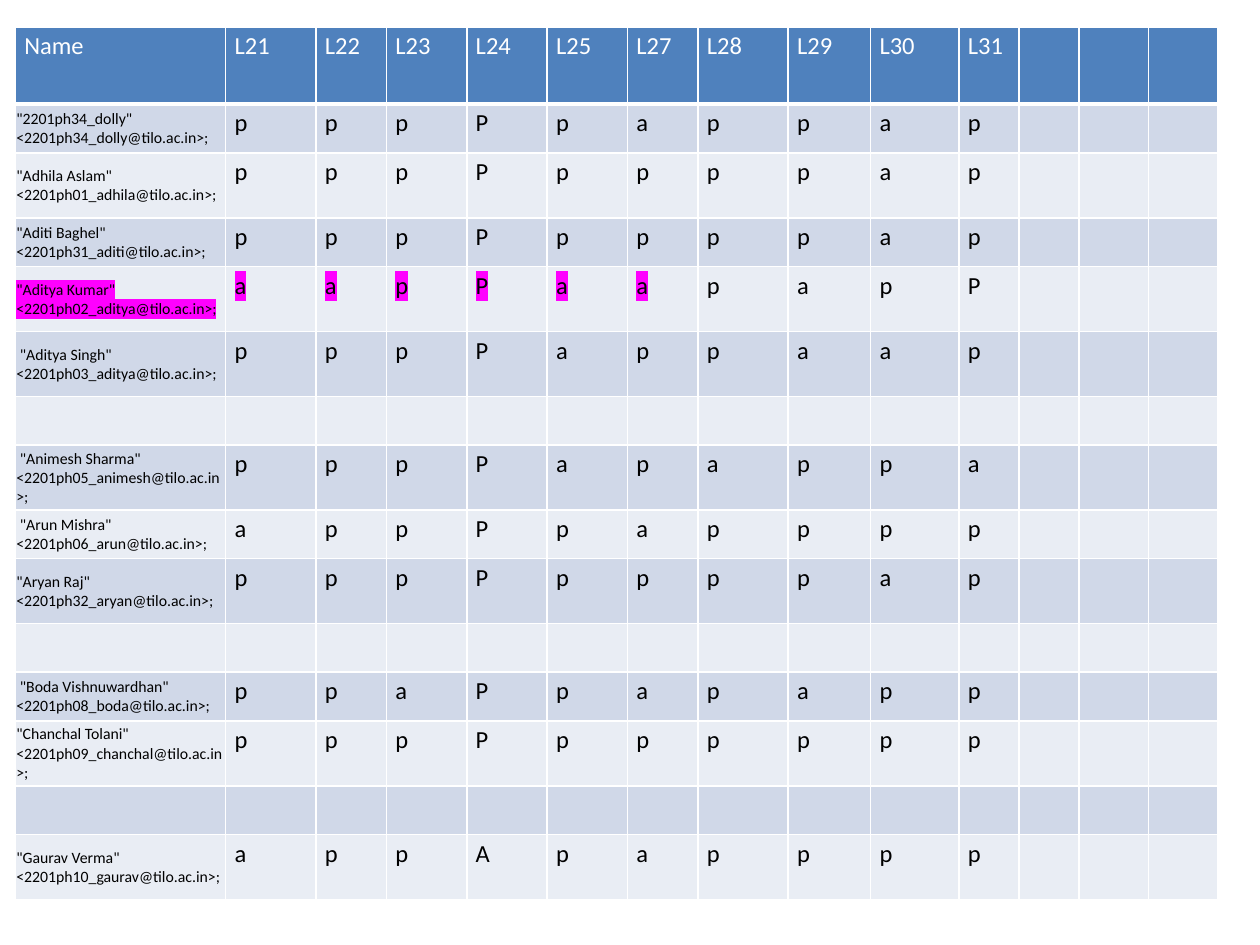
from lxml.etree import SubElement
from pptx import Presentation
from pptx.dml.color import RGBColor
from pptx.enum.text import MSO_ANCHOR
from pptx.oxml import parse_xml
from pptx.oxml.ns import nsdecls, qn
from pptx.util import Cm, Pt

COLORS = {
    "header": "4F81BD",
    "odd": "D0D8E8",
    "even": "E9EDF4",
    "line": "FFFFFF",
    "header_text": "FFFFFF",
    "text": "000000",
    "highlight": "FF00FF",
}
FONT = "Calibri"
DOMAIN = "tilo.ac.in"

COLUMN_WIDTHS = [4.24, 1.82, 1.42, 1.62, 1.62, 1.62, 1.42,
                 1.82, 1.66, 1.78, 1.21, 1.21, 1.4, 1.4]
HEADER_HEIGHT, SHORT, TALL = 1.56, 0.98, 1.31
LECTURES = ["L21", "L22", "L23", "L24", "L25", "L27", "L28", "L29", "L30", "L31"]

# Name, mailbox, one mark per lecture, row height; None is an empty row
STUDENTS = [
    ('"2201ph34_dolly"', "2201ph34_dolly", "pppPpappap", SHORT),
    ('"Adhila Aslam"', "2201ph01_adhila", "pppPppppap", TALL),
    ('"Aditi Baghel"', "2201ph31_aditi", "pppPppppap", SHORT),
    ('"Aditya Kumar"', "2201ph02_aditya", "aapPaapapP", TALL),
    (' "Aditya Singh"', "2201ph03_aditya", "pppPappaap", TALL),
    None,
    (' "Animesh Sharma"', "2201ph05_animesh", "pppPapappa", TALL),
    (' "Arun Mishra"', "2201ph06_arun", "appPpapppp", SHORT),
    ('"Aryan Raj"', "2201ph32_aryan", "pppPppppap", TALL),
    None,
    (' "Boda Vishnuwardhan"', "2201ph08_boda", "ppaPpapapp", SHORT),
    ('"Chanchal Tolani"', "2201ph09_chanchal", "pppPpppppp", TALL),
    None,
    ('"Gaurav Verma"', "2201ph10_gaurav", "appApapppp", TALL),
]
HIGHLIGHTED_MAILBOX = "2201ph02_aditya"
HIGHLIGHTED_COLUMNS = 7  # the name and the first six marks


def style_cell(cell, fill, bottom_width=1):
    """Draw the borders, the fill and the margins of a cell."""
    properties = cell._tc.get_or_add_tcPr()
    for side, width in (("L", 1), ("R", 1), ("T", 1), ("B", bottom_width)):
        line = SubElement(properties, qn(f"a:ln{side}"), w=str(Pt(width)))
        line_fill = SubElement(line, qn("a:solidFill"))
        SubElement(line_fill, qn("a:srgbClr"), val=COLORS["line"])
    cell.fill.solid()
    cell.fill.fore_color.rgb = RGBColor.from_string(COLORS[fill])
    cell.margin_left = cell.margin_right = Cm(0.18)
    cell.margin_top = cell.margin_bottom = Cm(0.09)


def write_cell(cell, text, size, color="text", highlighted=False):
    cell.text_frame.text = text
    run = cell.text_frame.paragraphs[0].runs[0]
    run.font.size = Pt(size)
    run.font.bold = False
    run.font.color.rgb = RGBColor.from_string(COLORS[color])
    if highlighted:
        run._r.rPr.append(parse_xml(
            f'<a:highlight {nsdecls("a")}>'
            f'<a:srgbClr val="{COLORS["highlight"]}"/></a:highlight>'))
    run.font.name = FONT


def fill_header(table):
    for cell in table.rows[0].cells:
        style_cell(cell, "header", bottom_width=3)
    for cell, title in zip(table.rows[0].cells, ["Name"] + LECTURES):
        write_cell(cell, title, 14, "header_text")


def fill_student(row, student):
    name, mailbox, marks, _ = student
    highlighted = mailbox == HIGHLIGHTED_MAILBOX

    # Name and address, close to the cell edge
    cell = row.cells[0]
    write_cell(cell, f"{name} <{mailbox}@{DOMAIN}>;", 9, highlighted=highlighted)
    cell.vertical_anchor = MSO_ANCHOR.MIDDLE
    cell.margin_left = cell.margin_right = cell.margin_top = Cm(0.02)
    cell.margin_bottom = 0

    # Attendance marks
    for column, mark in enumerate(marks, start=1):
        write_cell(row.cells[column], mark, 14,
                   highlighted=highlighted and column < HIGHLIGHTED_COLUMNS)


def add_attendance_table(slide, left, top):
    heights = [HEADER_HEIGHT] + [s[3] if s else SHORT for s in STUDENTS]
    table = slide.shapes.add_table(
        len(heights), len(COLUMN_WIDTHS), Cm(left), Cm(top),
        Cm(sum(COLUMN_WIDTHS)), Cm(sum(heights))).table
    for column, width in zip(table.columns, COLUMN_WIDTHS):
        column.width = Cm(width)
    for row, height in zip(table.rows, heights):
        row.height = Cm(height)

    fill_header(table)
    for index, student in enumerate(STUDENTS, start=1):
        row = table.rows[index]
        for cell in row.cells:
            style_cell(cell, "odd" if index % 2 else "even")
        if student:
            fill_student(row, student)


def main():
    presentation = Presentation()
    presentation.slide_width = Cm(25.4)
    presentation.slide_height = Cm(19.05)
    slide = presentation.slides.add_slide(presentation.slide_layouts[6])
    add_attendance_table(slide, left=0.31, top=0.54)
    presentation.save("out.pptx")


if __name__ == "__main__":
    main()
